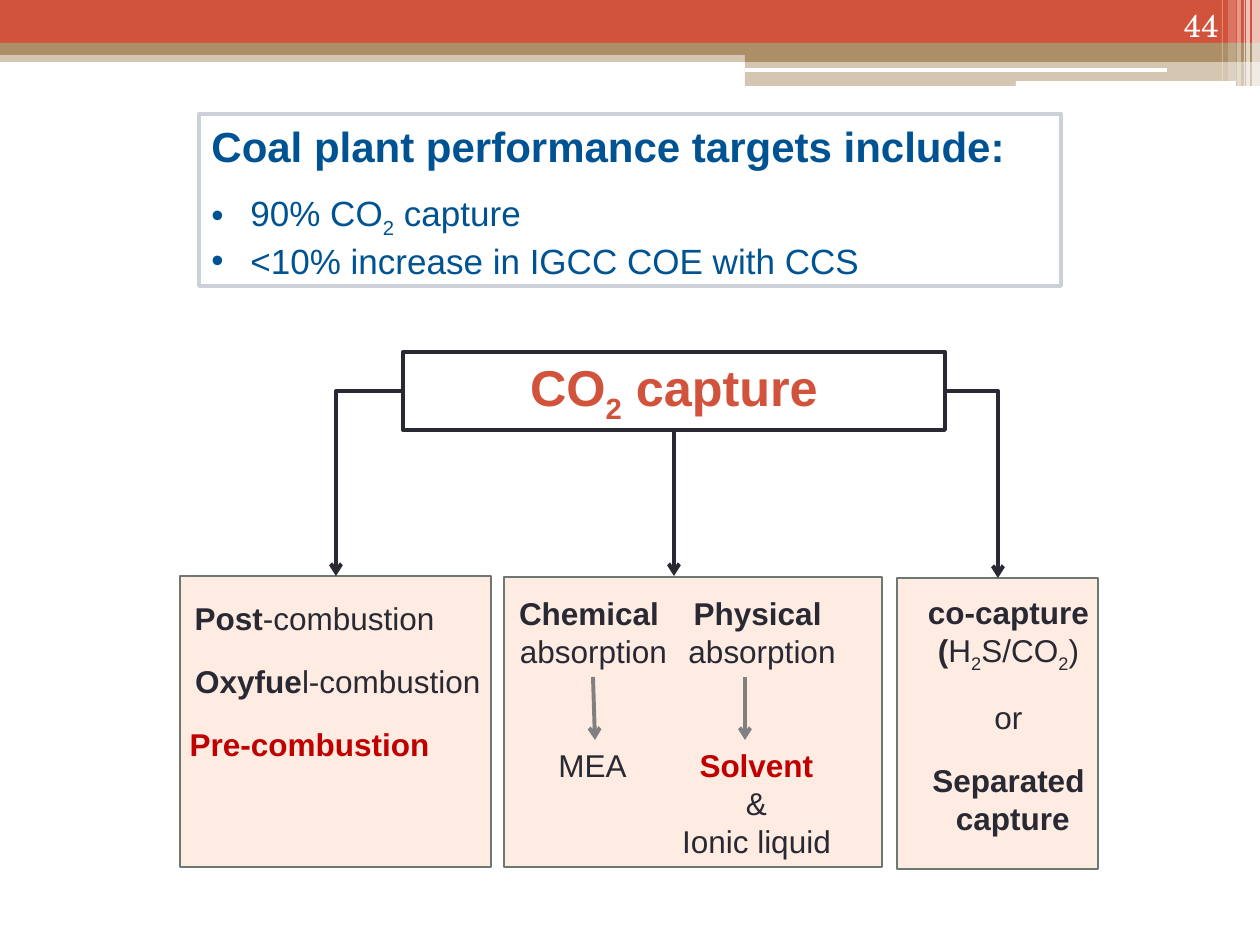
import lxml.etree
import pptx
import pptx.dml.color
import pptx.enum.shapes
import pptx.enum.text
import pptx.oxml
import pptx.oxml.ns
import pptx.util

PX = 914400 / 126
THEME = {
    "red": "D2533C", "tan": "AD8F67", "white": "FFFFFF", "panel": "FEEBE2",
    "panel_line": "6D7871", "ink": "292934", "accent": "C00000", "gray": "808080",
    "blue": "005392", "frame": "CCD1D9", "sans": "Arial", "serif": "TeX Gyre Schola",
    "title": 28.8, "heading": 24, "bullet": 20, "body": 18,
}
COLORS = {name: pptx.dml.color.RGBColor.from_string(value)
          for name, value in THEME.items() if isinstance(value, str) and len(value) == 6}
ALIGN = pptx.enum.text.PP_ALIGN
ANCHOR = pptx.enum.text.MSO_ANCHOR
FIT = pptx.enum.text.MSO_AUTO_SIZE
SHAPE = pptx.enum.shapes.MSO_SHAPE
CONNECTOR = pptx.enum.shapes.MSO_CONNECTOR
qn = pptx.oxml.ns.qn


def emu(*lengths):
    return [pptx.util.Emu(round(length * PX)) for length in lengths]


def write(frame, paragraphs, color, size, align, font="sans"):
    for index, (spans, gap) in enumerate(paragraphs):
        para = frame.paragraphs[0] if index == 0 else frame.add_paragraph()
        formats = {"alignment": align, "line_spacing": 1.0, "space_before": pptx.util.Pt(gap)}
        for name, value in formats.items():
            setattr(para, name, value)
        for text, style in spans:
            span = para.add_run()
            span.text = text
            points = THEME["heading"] if "h" in style else THEME[size]
            formats = {"name": THEME[font], "size": pptx.util.Pt(points), "bold": "b" in style}
            for name, value in formats.items():
                setattr(span.font, name, value)
            span.font.color.rgb = COLORS["accent" if "r" in style else color]
            if "s" in style:
                span.font._element.set("baseline", "-25000")


deck = pptx.Presentation()
deck.slide_width, deck.slide_height = emu(1260, 945)
page = deck.slides.add_slide(deck.slide_layouts[5])

bands = [
    (0, 50, 1260, 12, "tan", 50), (0, 0, 1260, 43, "red", 100),
    (0, 43, 1260, 12, "tan", 100), (745, 49, 515, 13, "tan", 100),
    (745, 62, 515, 24, "tan", 50), (745, 68, 422, 4, "white", 100),
    (1016, 81, 220, 5, "white", 100), (1252, 0, 8, 86, "white", 65),
    (1246, 0, 4, 86, "white", 65), (1244, 0, 1, 86, "white", 60),
    (1237, 0, 4, 86, "white", 40), (1228, 0, 8, 81, "white", 20),
    (1222, 0, 1, 81, "white", 30),
]
for left, top, width, height, color, opacity in bands:
    band = page.shapes.add_shape(SHAPE.RECTANGLE, *emu(left, top, width, height))
    band.shadow.inherit = False
    band.line.fill.background()
    band.fill.solid()
    band.fill.fore_color.rgb = COLORS[color]
    if opacity < 100:
        fill_color = band._element.spPr.find(".//" + qn("a:srgbClr"))
        lxml.etree.SubElement(fill_color, qn("a:alpha")).set("val", str(opacity * 1000))

for left, top, width, height in [(897, 578, 201, 291), (504, 577, 378, 290), (180, 576, 311, 291)]:
    panel = page.shapes.add_shape(SHAPE.RECTANGLE, *emu(left, top, width, height))
    panel.shadow.inherit = False
    panel.fill.solid()
    panel.fill.fore_color.rgb = COLORS["panel"]
    panel.line.color.rgb = COLORS["panel_line"]
    panel.line.width = pptx.util.Pt(1.5)

title = page.shapes.title
title.left, title.top, title.width, title.height = emu(403, 352, 542, 78)
title.line.color.rgb = COLORS["ink"]
title.line.width = pptx.util.Pt(2.25)
title.text_frame.vertical_anchor = ANCHOR.MIDDLE
title.text_frame.auto_size = FIT.NONE
write(title.text_frame, [([("CO", "b"), ("2", "bs"), (" capture", "b")], 0)],
      "red", "title", ALIGN.CENTER)

number = page.shapes.add_textbox(*emu(1126, 0, 105, 50))
number.text_frame.word_wrap = True
number.text_frame.vertical_anchor = ANCHOR.BOTTOM
write(number.text_frame, [([("44", "")], 0)], "white", "body", ALIGN.RIGHT, "serif")

targets = page.shapes.add_shape(SHAPE.RECTANGLE, *emu(199, 114, 862, 172))
targets.shadow.inherit = False
targets.fill.background()
targets.line.color.rgb = COLORS["frame"]
targets.line.width = pptx.util.Pt(2.25)
targets.text_frame.vertical_anchor = ANCHOR.TOP
write(targets.text_frame, [
    ([("Coal plant performance targets include:", "bh")], 0),
    ([("90% CO", ""), ("2", "s"), (" capture", "")], 12),
    ([("<10% increase in IGCC COE with CCS", "")], 0),
], "blue", "bullet", ALIGN.LEFT)
for para in targets.text_frame.paragraphs[1:]:
    properties = para._p.get_or_add_pPr()
    indent = emu(39)[0]
    properties.set("marL", str(indent))
    properties.set("indent", str(-indent))
    lxml.etree.SubElement(properties, qn("a:buFont")).set("typeface", THEME["sans"])
    lxml.etree.SubElement(properties, qn("a:buChar")).set("char", "•")

labels = [
    (180, 593, 267, 50, False, ALIGN.RIGHT, [([("Post", "b"), ("-combustion", "")], 0)]),
    (181, 656, 312, 50, False, ALIGN.RIGHT, [([("Oxyfue", "b"), ("l-combustion", "")], 0)]),
    (175, 719, 267, 50, False, ALIGN.RIGHT, [([("Pre-combustion", "br")], 0)]),
    (504, 588, 179, 89, True, ALIGN.CENTER,
     [([("Chemical ", "b")], 0), ([("absorption", "")], 0)]),
    (672, 588, 180, 89, True, ALIGN.CENTER,
     [([("Physical ", "b")], 0), ([("absorption", "")], 0)]),
    (546, 740, 97, 50, False, ALIGN.LEFT, [([("MEA", "")], 0)]),
    (669, 740, 175, 127, False, ALIGN.CENTER,
     [([("Solvent", "br")], 0), ([("&", "")], 0), ([("Ionic liquid", "")], 0)]),
    (915, 587, 187, 255, False, ALIGN.CENTER, [
        ([("co-capture", "b")], 0),
        ([("(", "b"), ("H", ""), ("2", "s"), ("S/CO", ""), ("2", "s"), (")", "")], 0),
        ([("or", "")], 14), ([("Separated", "b")], 14), ([(" capture", "b")], 0),
    ]),
]
for left, top, width, height, wrap, align, paragraphs in labels:
    label = page.shapes.add_textbox(*emu(left, top, width, height))
    label.text_frame.word_wrap = wrap
    label.text_frame.auto_size = FIT.SHAPE_TO_FIT_TEXT
    write(label.text_frame, paragraphs, "ink", "body", align)

arrows = [
    (403, 391, 336, 576, "ink", "elbow"), (945, 391, 998, 578, "ink", "elbow"),
    (674, 430, 674, 576, "ink", "joined"),
    (593, 677, 595, 740, "gray", "free"), (745, 677, 745, 740, "gray", "free"),
]
for start_x, start_y, end_x, end_y, color, route in arrows:
    kind = CONNECTOR.ELBOW if route == "elbow" else CONNECTOR.STRAIGHT
    arrow = page.shapes.add_connector(kind, *emu(start_x, start_y, end_x, end_y))
    if route == "elbow":
        arrow._element.spPr.find(qn("a:prstGeom")).set("prst", "bentConnector2")
    if route == "joined":
        arrow.begin_connect(title, 2)
    arrow.line.color.rgb = COLORS[color]
    arrow.line.width = pptx.util.Pt(2.25)
    outline = arrow.line._get_or_add_ln()
    lxml.etree.SubElement(outline, qn("a:tailEnd")).set("type", "arrow")
    lxml.etree.SubElement(arrow._element.spPr, qn("a:effectLst"))

deck.save("out.pptx")
